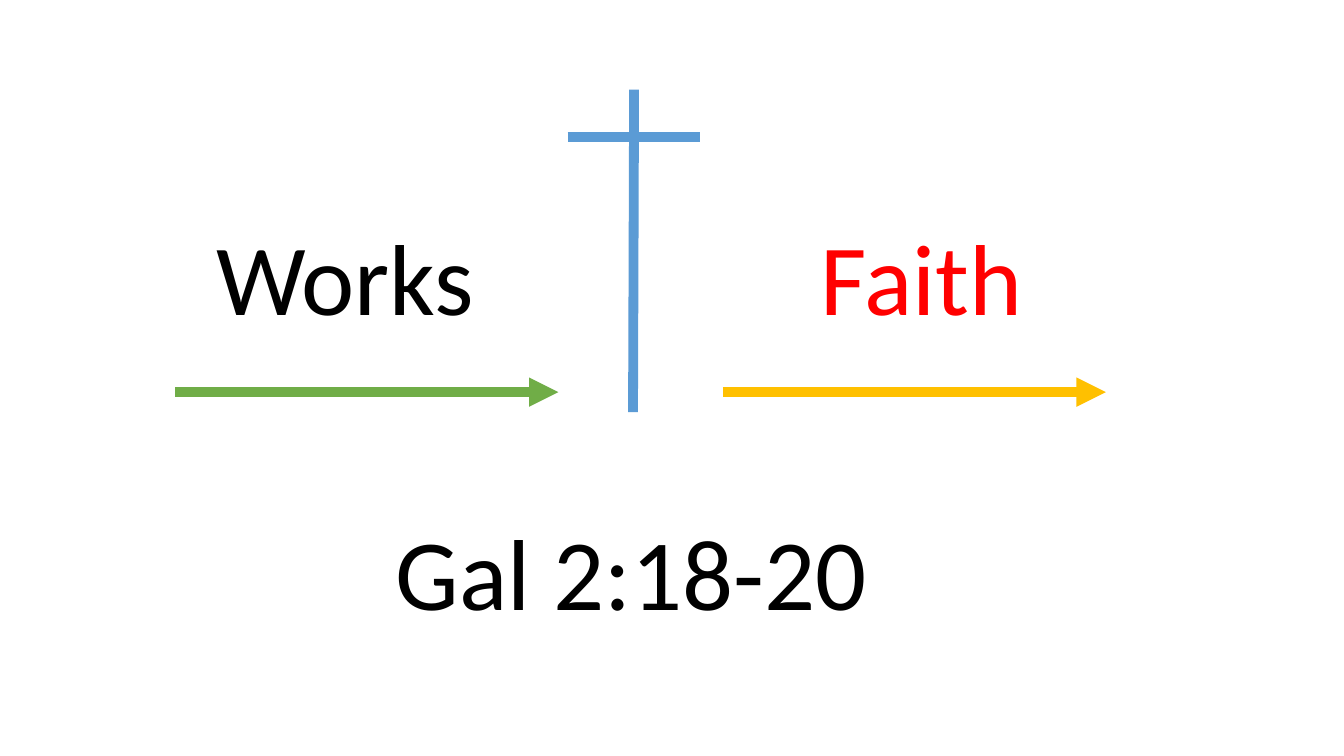
from lxml.etree import SubElement
from pptx import Presentation
from pptx.dml.color import RGBColor
from pptx.enum.shapes import MSO_CONNECTOR
from pptx.enum.text import MSO_AUTO_SIZE, PP_ALIGN
from pptx.oxml.ns import qn
from pptx.util import Inches, Pt

SLIDE_WIDTH, SLIDE_HEIGHT = Inches(13.33), Inches(7.5)
BLACK, RED = "000000", "FF0000"
BLUE, GREEN, GOLD = "5B9BD5", "70AD47", "FFC000"

# Percentages of the slide's width or height
WORKS_LEFT = 13.05
ARROW_LENGTH, ARROW_TOP = 28.5, 51.87
LABEL_WIDTH, LABEL_TOP, TEXT_HEIGHT = 25.28, 27.73, 17.47


def across(percent):
    return round(SLIDE_WIDTH * percent / 100)


def down(percent):
    return round(SLIDE_HEIGHT * percent / 100)


def rgb(hex_color):
    return RGBColor.from_string(hex_color)


def add_stroke(slide, start, end, color, arrow=False):
    stroke = slide.shapes.add_connector(
        MSO_CONNECTOR.STRAIGHT,
        across(start[0]), down(start[1]), across(end[0]), down(end[1]))
    stroke.line.color.rgb = rgb(color)
    stroke.line.width = Pt(7)
    properties = stroke._element.spPr
    if arrow:
        SubElement(properties.find(qn("a:ln")), qn("a:tailEnd"), type="triangle")
    SubElement(properties, qn("a:effectLst"))


def add_cross(slide):
    add_stroke(slide, (42.23, 18.13), (52.05, 18.13), BLUE)
    add_stroke(slide, (47.18, 11.87), (47.1, 54.53), BLUE)


def add_arrow(slide, left, color):
    add_stroke(slide, (left, ARROW_TOP), (left + ARROW_LENGTH, ARROW_TOP),
               color, arrow=True)


def add_words(slide, words, left, top, width, color, align=PP_ALIGN.CENTER, wrap=True):
    box = slide.shapes.add_textbox(
        across(left), down(top), across(width), down(TEXT_HEIGHT))
    frame = box.text_frame
    frame.text = words
    frame.word_wrap = wrap
    frame.auto_size = MSO_AUTO_SIZE.SHAPE_TO_FIT_TEXT
    paragraph = frame.paragraphs[0]
    paragraph.alignment = align
    font = paragraph.runs[0].font
    font.name, font.size = "Calibri", Pt(72)
    font.color.rgb = rgb(color)


def main():
    deck = Presentation()
    deck.slide_width, deck.slide_height = SLIDE_WIDTH, SLIDE_HEIGHT
    slide = deck.slides.add_slide(deck.slide_layouts[6])

    add_cross(slide)
    add_words(slide, "Faith", 55.95, LABEL_TOP, LABEL_WIDTH, RED)
    add_words(slide, "Works", WORKS_LEFT, LABEL_TOP, LABEL_WIDTH, BLACK)
    add_arrow(slide, WORKS_LEFT, GREEN)
    add_arrow(slide, 53.78, GOLD)
    add_words(slide, "Gal 2:18-20", 28.73, 66.8, 36.9, BLACK,
              align=PP_ALIGN.LEFT, wrap=False)

    deck.save("out.pptx")


if __name__ == "__main__":
    main()
